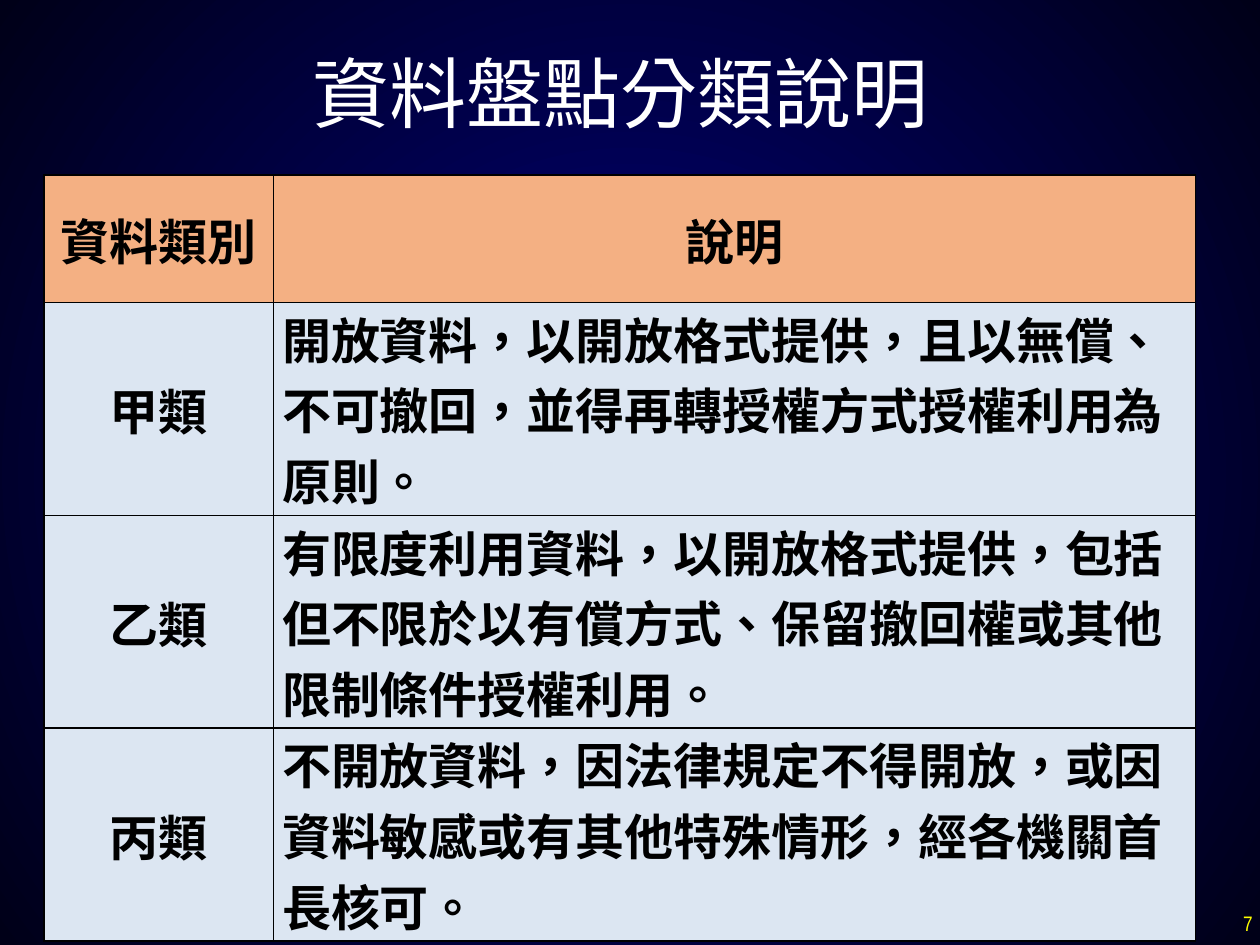
from typing import NamedTuple

from lxml import etree
from pptx import Presentation
from pptx.dml.color import RGBColor
from pptx.enum.lang import MSO_LANGUAGE_ID
from pptx.enum.text import MSO_ANCHOR, PP_ALIGN
from pptx.oxml import parse_xml
from pptx.oxml.ns import nsdecls, qn
from pptx.util import Inches, Pt

LEFT, MID, RIGHT = PP_ALIGN.LEFT, PP_ALIGN.CENTER, PP_ALIGN.RIGHT
TOP, CENTRE = MSO_ANCHOR.TOP, MSO_ANCHOR.MIDDLE
TAIWAN = MSO_LANGUAGE_ID.TRADITIONAL_CHINESE

BLACK, WHITE, YELLOW = "000000", "FFFFFF", "FFFF00"
ORANGE, PALE = "F4B083", "DCE6F2"
COLS = (1.82, 7.32)
HEAD, BODY = 1.01, 1.69


class Entry(NamedTuple):
    kind: str
    note: str


HEADING = Entry("資料類別", "說明")
ENTRIES = (
    Entry("甲類", "開放資料，以開放格式提供，且以無償、不可撤回，並得再轉授權方式授權利用為原則。"),
    Entry("乙類", "有限度利用資料，以開放格式提供，包括但不限於以有償方式、保留撤回權或其他限制條件授權利用。"),
    Entry("丙類", "不開放資料，因法律規定不得開放，或因資料敏感或有其他特殊情形，經各機關首長核可。"),
)


def hue(code: str) -> RGBColor:
    return RGBColor.from_string(code)


def write(frame, text: str, *, size: float, face: str, color: str,
          bold: bool = False, align=LEFT) -> None:
    para = frame.paragraphs[0]
    para.alignment = align
    run = para.add_run()
    run.text = text
    font = run.font
    font.size, font.name, font.bold = Pt(size), face, bold
    font.color.rgb = hue(color)
    font.language_id = TAIWAN


def add_box(slide, left: float, top: float, width: float, height: float,
            wrap: bool, anchor):
    box = slide.shapes.add_textbox(
        Inches(left), Inches(top), Inches(width), Inches(height))
    frame = box.text_frame
    frame.word_wrap, frame.vertical_anchor = wrap, anchor
    return frame


def add_edges(cell, color: str, width: float) -> None:
    props = cell._tc.get_or_add_tcPr()
    for spot, side in enumerate(("lnL", "lnR", "lnT", "lnB")):
        line = etree.Element(qn(f"a:{side}"), w=str(Pt(width)))
        fill = etree.SubElement(line, qn("a:solidFill"))
        etree.SubElement(fill, qn("a:srgbClr"), val=color)
        props.insert(spot, line)


def fill_cell(cell, text: str, fill: str, align, anchor) -> None:
    cell.fill.solid()
    cell.fill.fore_color.rgb = hue(fill)
    cell.margin_left = cell.margin_right = Inches(0.07)
    cell.margin_top = cell.margin_bottom = 0
    cell.vertical_anchor = anchor
    write(cell.text_frame, text, size=28, face="Times New Roman",
          color=BLACK, bold=True, align=align)
    add_edges(cell, BLACK, 1)


def add_grid(slide) -> None:
    rows = (HEADING, *ENTRIES)
    table = slide.shapes.add_table(
        len(rows), len(COLS), Inches(0.35), Inches(1.39),
        Inches(sum(COLS)), Inches(HEAD + BODY * len(ENTRIES))).table
    for col, width in zip(table.columns, COLS):
        col.width = Inches(width)
    for i, row in enumerate(rows):
        first = i == 0
        table.rows[i].height = Inches(HEAD if first else BODY)
        fill = ORANGE if first else PALE
        fill_cell(table.cell(i, 0), row.kind, fill, MID, CENTRE)
        fill_cell(table.cell(i, 1), row.note, fill,
                  MID if first else LEFT, CENTRE if first else TOP)


def paint_back(slide) -> None:
    stops = "".join(
        f'<a:gs pos="{spot * 1000}"><a:srgbClr val="{color}"/></a:gs>'
        for spot, color in ((0, "000066"), (21, "000066"), (100, "000018")))
    slide.element.cSld.insert(0, parse_xml(
        f'<p:bg {nsdecls("p", "a")}><p:bgPr><a:gradFill rotWithShape="1">'
        f'<a:gsLst>{stops}</a:gsLst><a:path path="circle">'
        '<a:fillToRect l="50000" t="50000" r="50000" b="50000"/></a:path>'
        '</a:gradFill><a:effectLst/></p:bgPr></p:bg>'))


def main() -> None:
    deck = Presentation()
    deck.slide_width, deck.slide_height = Inches(10), Inches(7.5)
    slide = deck.slides.add_slide(deck.slide_layouts[6])
    paint_back(slide)

    # Page number
    write(add_box(slide, 7.71, 7.13, 2.33, 0.4, True, CENTRE), "7",
          size=12, face="Arial Narrow", color=YELLOW, align=RIGHT)

    # Table of data classes
    add_grid(slide)

    # Title
    write(add_box(slide, 2.38, 0.31, 5.14, 0.84, False, TOP),
          "資料盤點分類說明", size=44, face="Noto Sans CJK SC", color=WHITE)

    deck.save("out.pptx")


if __name__ == "__main__":
    main()
